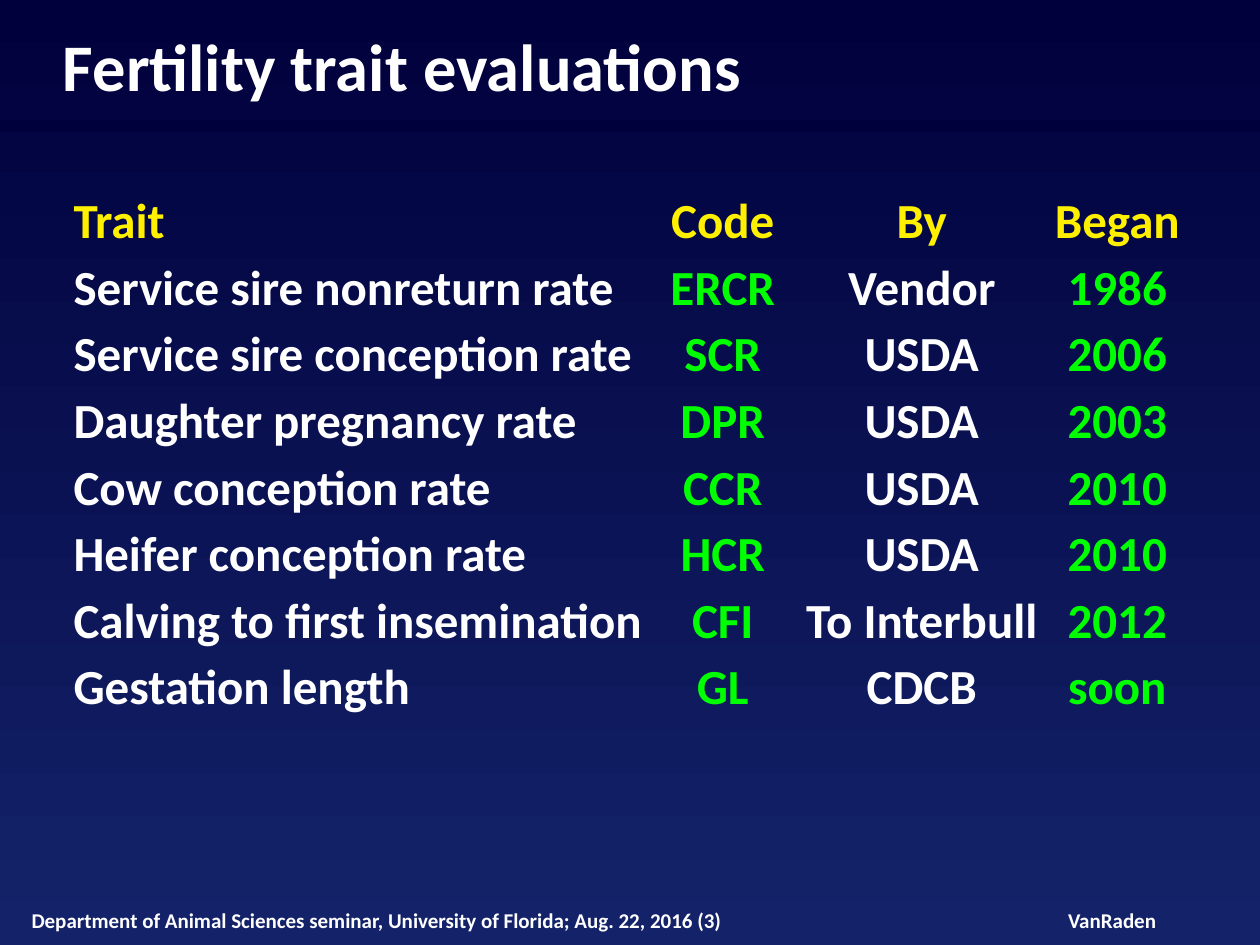
import pptx
import pptx.util
import pptx.dml.color
import pptx.enum.shapes
import pptx.enum.text
import lxml.etree

Pt = pptx.util.Pt
RGBColor = pptx.dml.color.RGBColor
PP_ALIGN = pptx.enum.text.PP_ALIGN
MSO_ANCHOR = pptx.enum.text.MSO_ANCHOR

NAVY = RGBColor(0x00, 0x00, 0x3C)
BLUE = RGBColor(0x14, 0x23, 0x69)
WHITE = RGBColor(0xFF, 0xFF, 0xFF)
YELLOW = RGBColor(0xFF, 0xF0, 0x00)
GREEN = RGBColor(0x00, 0xFF, 0x00)
NO_STYLE = "{2D5ABB26-0587-4C30-8999-92F81FD0307C}"


def write(p, text, size, color, align):
    p.alignment = align
    r = p.add_run()
    r.text = text
    r.font.name = "Calibri"
    r.font.size = Pt(size)
    r.font.bold = True
    r.font.color.rgb = color


def zero_margins(box):
    box.margin_left = box.margin_right = box.margin_top = box.margin_bottom = 0


prs = pptx.Presentation()
prs.slide_width, prs.slide_height = Pt(720), Pt(540)
s = prs.slides.add_slide(prs.slide_layouts[6])

fill = s.background.fill
fill.gradient()
fill.gradient_angle = 270
for stop, position, color in zip(fill.gradient_stops, (0, 1), (NAVY, BLUE)):
    stop.position = position
    stop.color.rgb = color

rule = s.shapes.add_connector(
    pptx.enum.shapes.MSO_CONNECTOR.STRAIGHT, 0, Pt(72), Pt(720), Pt(72))
rule.line.color.rgb = NAVY
rule.line.width = Pt(6.5)
lxml.etree.SubElement(rule._element.spPr, pptx.oxml.ns.qn("a:effectLst"))

texts = [
    ("VanRaden", 610, 518.4, 51, 14.4, 12, PP_ALIGN.CENTER, MSO_ANCHOR.MIDDLE, False),
    ("Department of Animal Sciences seminar, University of Florida; Aug. 22, 2016 (3)",
     18, 518.4, 444, 14.4, 12, PP_ALIGN.LEFT, MSO_ANCHOR.MIDDLE, True),
    ("Fertility trait evaluations", 36, 14.4, 648, 46, 38, PP_ALIGN.LEFT, MSO_ANCHOR.TOP, True),
]
for text, x, y, w, h, size, align, anchor, wrap in texts:
    tf = s.shapes.add_textbox(Pt(x), Pt(y), Pt(w), Pt(h)).text_frame
    zero_margins(tf)
    tf.word_wrap = wrap
    tf.vertical_anchor = anchor
    write(tf.paragraphs[0], text, size, WHITE, align)

rows = [
    ("Trait", "Code", "By", "Began"),
    ("Service sire nonreturn rate", "ERCR", "Vendor", "1986"),
    ("Service sire conception rate", "SCR", "USDA", "2006"),
    ("Daughter pregnancy rate", "DPR", "USDA", "2003"),
    ("Cow conception rate", "CCR", "USDA", "2010"),
    ("Heifer conception rate", "HCR", "USDA", "2010"),
    ("Calving to first insemination", "CFI", "To Interbull", "2012"),
    ("Gestation length", "GL", "CDCB", "soon"),
]
widths = (330, 82, 145.5, 78)
heights = [36] + [38] * (len(rows) - 1)
table = s.shapes.add_table(
    len(rows), len(widths), Pt(42), Pt(108), Pt(sum(widths)), Pt(sum(heights))).table
table.first_row = table.horz_banding = False
table._tbl.tblPr.find(pptx.oxml.ns.qn("a:tableStyleId")).text = NO_STYLE
for column, width in zip(table.columns, widths):
    column.width = Pt(width)
for i, (row, height) in enumerate(zip(rows, heights)):
    table.rows[i].height = Pt(height)
    for j, text in enumerate(row):
        cell = table.cell(i, j)
        cell.fill.background()
        zero_margins(cell)
        p = cell.text_frame.paragraphs[0]
        p.line_spacing = Pt(height)
        color = YELLOW if i == 0 else GREEN if j % 2 else WHITE
        write(p, text, 28, color, PP_ALIGN.CENTER if j else PP_ALIGN.LEFT)

prs.save("out.pptx")
